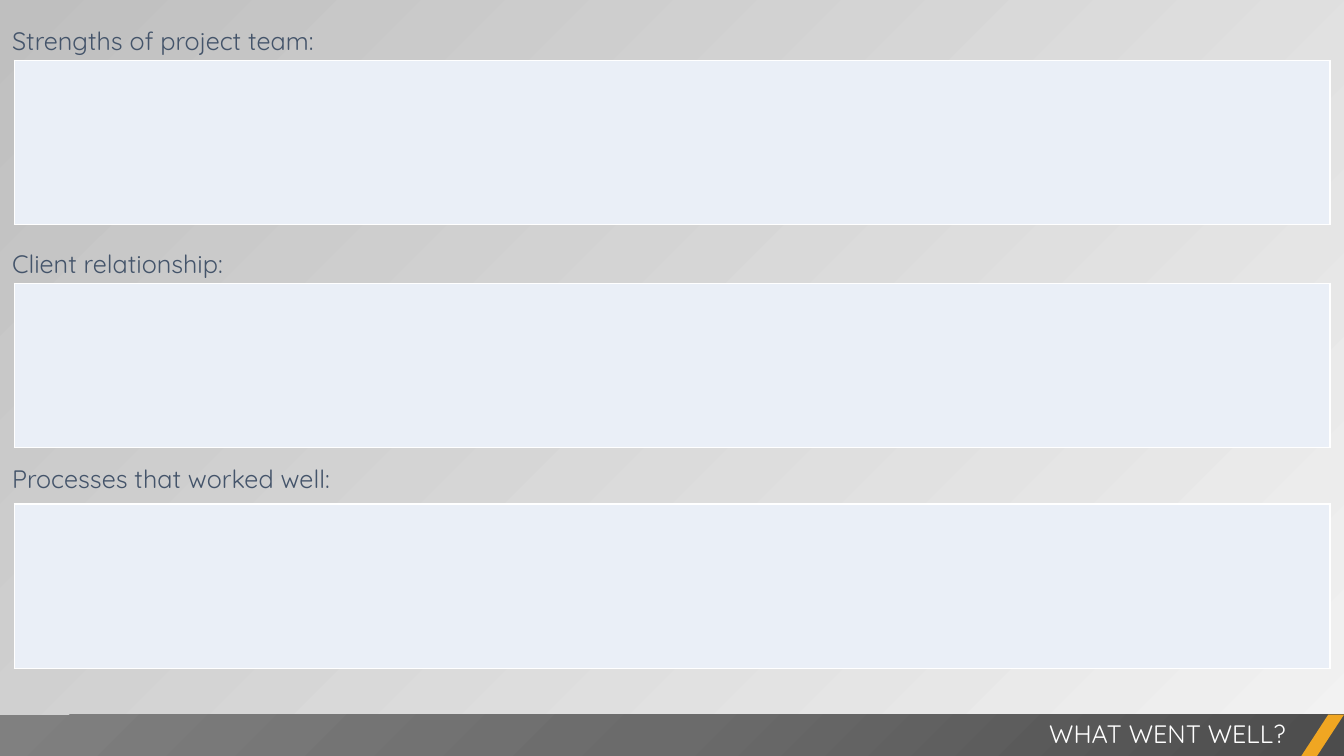
import lxml.etree
import pptx
import pptx.dml.color
import pptx.enum.shapes
import pptx.enum.text
import pptx.oxml
import pptx.oxml.ns
import pptx.util
from pptx.util import Inches

FONT = "Quicksand"
SLATE, WHITE, PALE_BLUE, AMBER = "44546A", "FFFFFF", "EAEFF7", "F0A622"
ALIGN = pptx.enum.text.PP_ALIGN
SHAPES = pptx.enum.shapes.MSO_SHAPE

# Heading, heading top, heading height, line spacing, answer box top
SECTIONS = [
    ("Strengths of project team:", 0.19, 0.41, pptx.util.Pt(21.5), 0.6),
    ("Client relationship:", 2.41, 0.41, pptx.util.Pt(21.5), 2.81),
    ("Processes that worked well:", 4.48, 0.45, 1.2, 5),
]


def color(value):
    return pptx.dml.color.RGBColor.from_string(value)


def set_background(slide):
    fill = slide.background.fill
    fill.gradient()
    fill.gradient_angle = 135
    for stop, position, value in zip(fill.gradient_stops, (0, 1), ("F2F2F2", "BFBFBF")):
        stop.position = position
        stop.color.rgb = color(value)


def add_text(slide, text, left, top, width, height, *, value=SLATE, align=ALIGN.LEFT,
             inset_x=0.1, inset_y=0.05, line_spacing=None, space_before=None):
    frame = slide.shapes.add_textbox(
        Inches(left), Inches(top), Inches(width), Inches(height)).text_frame
    frame.word_wrap = True
    frame.auto_size = pptx.enum.text.MSO_AUTO_SIZE.SHAPE_TO_FIT_TEXT
    frame.margin_left = frame.margin_right = Inches(inset_x)
    frame.margin_top = frame.margin_bottom = Inches(inset_y)
    paragraph = frame.paragraphs[0]
    paragraph.alignment = align
    paragraph.line_spacing = line_spacing
    paragraph.space_before = space_before
    run = paragraph.add_run()
    run.text = text
    run.font.name = FONT
    run.font.size = pptx.util.Pt(18)
    run.font.color.rgb = color(value)


def set_borders(cell, value, points):
    properties = cell._tc.get_or_add_tcPr()
    for index, side in enumerate(("lnL", "lnR", "lnT", "lnB")):
        properties.insert(index, pptx.oxml.parse_xml(
            f'<a:{side} {pptx.oxml.ns.nsdecls("a")} w="{pptx.util.Pt(points)}">'
            f'<a:solidFill><a:srgbClr val="{value}"/></a:solidFill></a:{side}>'))


def add_answer_box(slide, top):
    table = slide.shapes.add_table(
        1, 1, Inches(0.14), Inches(top), Inches(13.05), Inches(1.63)).table
    cell = table.cell(0, 0)
    cell.fill.solid()
    cell.fill.fore_color.rgb = color(PALE_BLUE)
    set_borders(cell, WHITE, 1)


def add_shape(slide, kind, left, top, width, height, value):
    shape = slide.shapes.add_shape(
        kind, Inches(left), Inches(top), Inches(width), Inches(height))
    shape.shadow.inherit = False
    shape.line.fill.background()
    shape.fill.solid()
    shape.fill.fore_color.rgb = color(value)
    return shape


def set_corner_gradient(shape, stops):
    """Spread a circular gradient from the bottom right corner."""
    shape.fill.gradient()
    gradient = shape._element.spPr.find(pptx.oxml.ns.qn("a:gradFill"))
    for child in list(gradient):
        gradient.remove(child)
    stop_list = lxml.etree.SubElement(gradient, pptx.oxml.ns.qn("a:gsLst"))
    for position, value in stops:
        stop = lxml.etree.SubElement(
            stop_list, pptx.oxml.ns.qn("a:gs"), pos=str(position * 1000))
        lxml.etree.SubElement(stop, pptx.oxml.ns.qn("a:srgbClr"), val=value)
    circle = lxml.etree.SubElement(gradient, pptx.oxml.ns.qn("a:path"), path="circle")
    lxml.etree.SubElement(
        circle, pptx.oxml.ns.qn("a:fillToRect"), l="100000", t="100000")


def add_footer(slide):
    bar = add_shape(slide, SHAPES.RECTANGLE, 0, 7.09, 13.33, 0.42, "6B6B6B")
    set_corner_gradient(bar, [(0, "4C4C4C"), (50, "6B6B6B"), (100, "808080")])
    accent = add_shape(slide, SHAPES.PARALLELOGRAM, 12.9, 7.09, 0.43, 0.42, AMBER)
    accent.adjustments[0] = 0.652
    add_text(slide, "WHAT WENT WELL?", 5.25, 7.08, 7.6, 0.4,
             value=WHITE, align=ALIGN.RIGHT)


def main():
    presentation = pptx.Presentation()
    presentation.slide_width = Inches(13.33)
    presentation.slide_height = Inches(7.5)
    slide = presentation.slides.add_slide(presentation.slide_layouts[6])
    set_background(slide)

    # Headed answer boxes
    for heading, top, height, line_spacing, box_top in SECTIONS:
        add_answer_box(slide, box_top)
        add_text(slide, heading, 0, top, 7.63, height, inset_x=0.12, inset_y=0.06,
                 line_spacing=line_spacing, space_before=pptx.util.Pt(3.6))

    # Title bar at the foot
    add_footer(slide)
    presentation.save("out.pptx")


if __name__ == "__main__":
    main()
